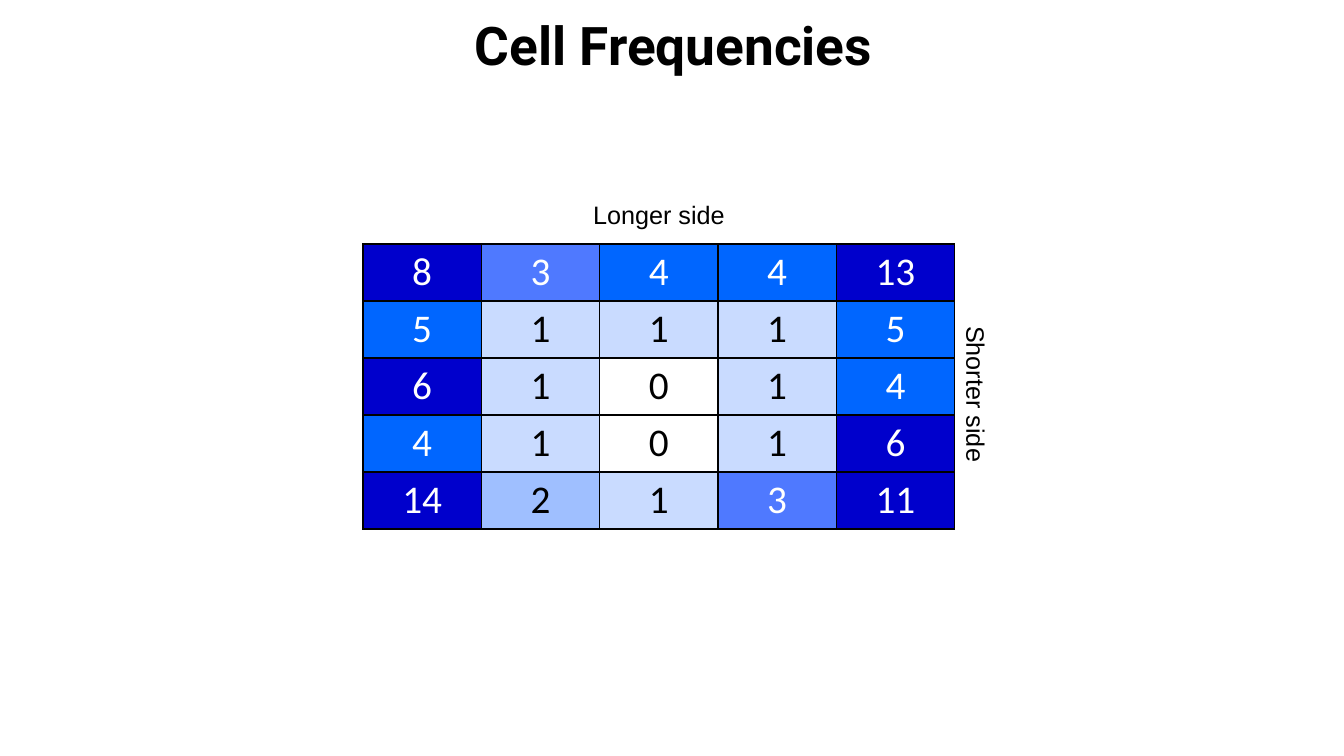
from lxml.etree import SubElement
from pptx import Presentation
from pptx.dml.color import RGBColor
from pptx.enum.shapes import MSO_SHAPE
from pptx.enum.text import MSO_ANCHOR, PP_ALIGN
from pptx.oxml.ns import qn
from pptx.util import Inches, Pt

BLACK = RGBColor(0x00, 0x00, 0x00)
WHITE = RGBColor(0xFF, 0xFF, 0xFF)
NAVY = RGBColor(0x00, 0x00, 0xCC)
BLUE = RGBColor(0x00, 0x66, 0xFF)
PERIWINKLE = RGBColor(0x4F, 0x79, 0xFF)
SKY = RGBColor(0x9F, 0xBF, 0xFF)
PALE = RGBColor(0xC9, 0xDB, 0xFF)

# Lowest frequency of each band, with its fill and text colours
BANDS = [
    (6, NAVY, WHITE),
    (4, BLUE, WHITE),
    (3, PERIWINKLE, WHITE),
    (2, SKY, BLACK),
    (1, PALE, BLACK),
    (0, None, BLACK),
]

FREQUENCIES = [
    [8, 3, 4, 4, 13],
    [5, 1, 1, 1, 5],
    [6, 1, 0, 1, 4],
    [4, 1, 0, 1, 6],
    [14, 2, 1, 3, 11],
]


def write_text(frame, text, font="Arial", size=18, color=BLACK, bold=False,
               line_spacing=None):
    paragraph = frame.paragraphs[0]
    paragraph.alignment = PP_ALIGN.CENTER
    paragraph.line_spacing = line_spacing
    run = paragraph.add_run()
    run.text = text
    run.font.name = font
    run.font.size = Pt(size)
    run.font.bold = bold
    run.font.color.rgb = color


def add_borders(cell, color=BLACK, width=1):
    properties = cell._tc.get_or_add_tcPr()
    for side in ("a:lnL", "a:lnR", "a:lnT", "a:lnB"):
        line = SubElement(properties, qn(side), w=str(Pt(width)))
        fill = SubElement(line, qn("a:solidFill"))
        SubElement(fill, qn("a:srgbClr"), val=str(color))


class SlideBuilder:
    def __init__(self, presentation):
        self.slide = presentation.slides.add_slide(presentation.slide_layouts[5])

    def title(self, text, left, top, width, height):
        shape = self.slide.shapes.title
        shape.left, shape.top = Inches(left), Inches(top)
        shape.width, shape.height = Inches(width), Inches(height)
        shape.text_frame.vertical_anchor = MSO_ANCHOR.MIDDLE
        write_text(shape.text_frame, text, font="Roboto", size=38, bold=True,
                   line_spacing=0.9)

    def label(self, text, left, top, width, height, rotation=0):
        shape = self.slide.shapes.add_shape(
            MSO_SHAPE.RECTANGLE, Inches(left), Inches(top),
            Inches(width), Inches(height))
        shape.shadow.inherit = False
        shape.fill.solid()
        shape.fill.fore_color.rgb = WHITE
        shape.line.fill.background()
        shape.rotation = rotation
        shape.text_frame.word_wrap = False
        shape.text_frame.vertical_anchor = MSO_ANCHOR.MIDDLE
        write_text(shape.text_frame, text)

    def heat_table(self, values, left, top, width, height):
        table = self.slide.shapes.add_table(
            len(values), len(values[0]), Inches(left), Inches(top),
            Inches(width), Inches(height)).table
        table.first_row = table.horz_banding = False
        for row_index, row in enumerate(values):
            for column_index, value in enumerate(row):
                self.heat_cell(table.cell(row_index, column_index), value)

    def heat_cell(self, cell, value):
        fill, text_color = next(
            (band[1], band[2]) for band in BANDS if value >= band[0])
        add_borders(cell)
        if fill is None:
            cell.fill.background()
        else:
            cell.fill.solid()
            cell.fill.fore_color.rgb = fill
        cell.margin_top = cell.margin_bottom = Inches(0.03)
        cell.vertical_anchor = MSO_ANCHOR.MIDDLE
        write_text(cell.text_frame, str(value), font="Calibri", size=28,
                   color=text_color)


def main():
    presentation = Presentation()
    presentation.slide_width = Inches(13.33)
    presentation.slide_height = Inches(7.5)
    builder = SlideBuilder(presentation)

    # Title
    builder.title("Cell Frequencies", 2.01, 0.14, 9.34, 0.67)

    # Side labels
    builder.label("Longer side", 5.78, 1.88, 1.51, 0.49)
    builder.label("Shorter side", 8.73, 3.71, 1.91, 0.4, rotation=90)

    # Frequency grid
    builder.heat_table(FREQUENCIES, 3.6, 2.42, 5.87, 2.83)

    presentation.save("out.pptx")


if __name__ == "__main__":
    main()
